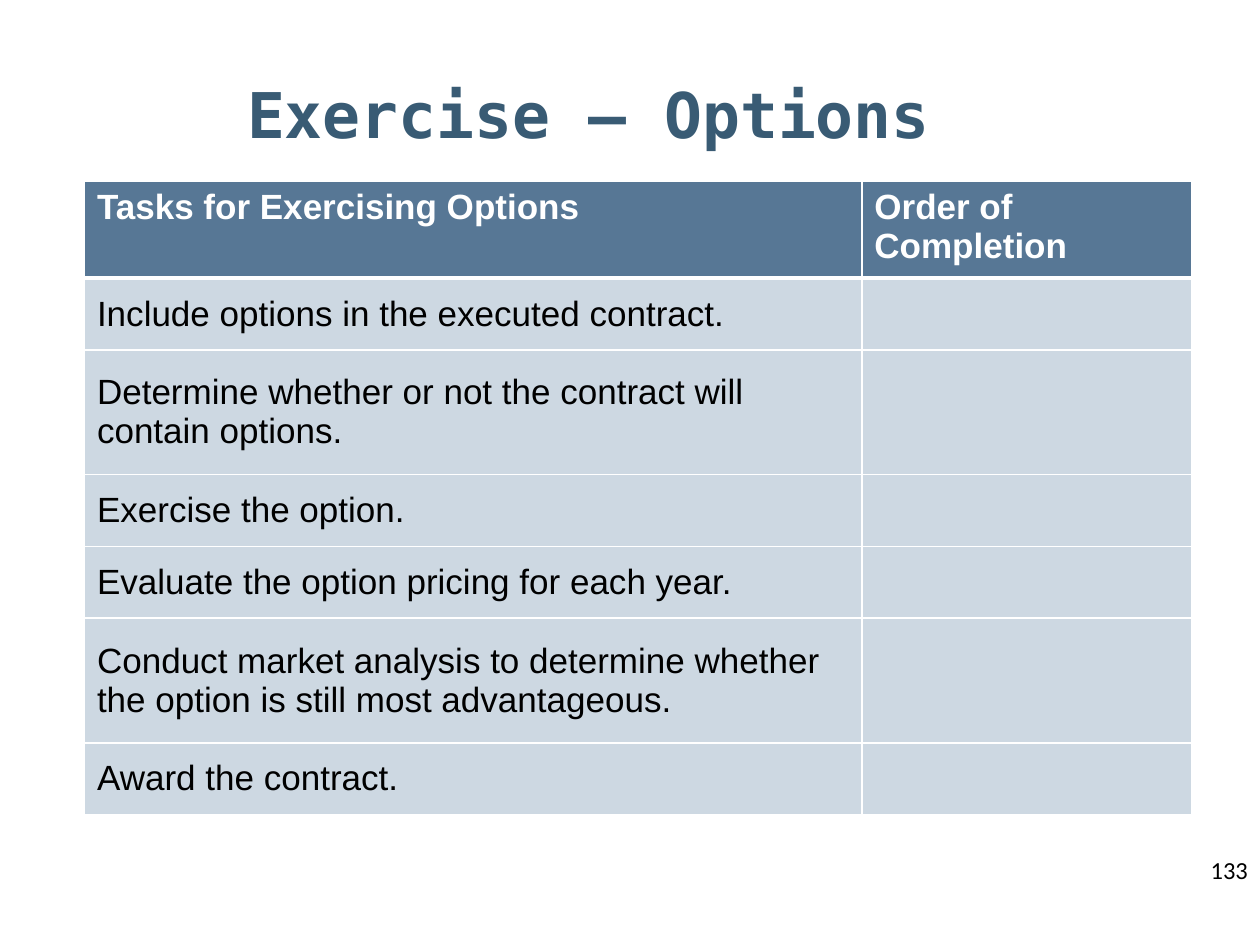
"""Build the options exercise slide with its task-ordering table."""
from dataclasses import dataclass

from lxml.etree import SubElement as Sub
from pptx import Presentation
from pptx.dml.color import RGBColor as RGB
from pptx.enum.text import MSO_ANCHOR as Anchor, PP_ALIGN as Align
from pptx.oxml.ns import qn
from pptx.util import Inches, Pt

WHITE, BLACK = "FFFFFF", "000000"


@dataclass
class Row:
    task: str
    order: str = ""
    height: float = 0.57
    fill: str = "CDD8E2"
    color: str = BLACK
    bold: bool = False
    anchor: Anchor = Anchor.MIDDLE
    top: float = 1
    bottom: float = 1


ROWS = [
    Row("Tasks for Exercising Options", "Order of Completion", fill="577795",
        color=WHITE, bold=True, anchor=Anchor.TOP, bottom=3),
    Row("Include options in the executed contract.", top=3),
    Row("Determine whether or not the contract will contain options.", height=0.99),
    Row("Exercise the option."),
    Row("Evaluate the option pricing for each year."),
    Row("Conduct market analysis to determine whether the option is still "
        "most advantageous.", height=0.99),
    Row("Award the contract."),
]
COLS = [6.17, 2.62]


def rgb(color: str) -> RGB:
    return RGB.from_string(color)


def style(p, color: str, **formats) -> None:
    for name, value in formats.items():
        setattr(p.font, name, value)
    p.font.color.rgb = rgb(color)


def place(sp, *box: float) -> None:
    for name, value in zip(("left", "top", "width", "height"), box):
        setattr(sp, name, Inches(value))


def add_borders(cell, row: Row) -> None:
    tc_pr = cell._tc.get_or_add_tcPr()
    widths = {"a:lnL": 1, "a:lnR": 1, "a:lnT": row.top, "a:lnB": row.bottom}
    for tag, width in widths.items():
        ln = Sub(tc_pr, qn(tag), w=str(Pt(width)))
        Sub(Sub(ln, qn("a:solidFill")), qn("a:srgbClr"), val=WHITE)


def fill_cell(cell, text: str, row: Row) -> None:
    add_borders(cell, row)
    cell.fill.solid()
    cell.fill.fore_color.rgb = rgb(row.fill)
    cell.vertical_anchor = row.anchor
    cell.text = text
    style(cell.text_frame.paragraphs[0], row.color,
          name="Arial", size=Pt(20), bold=row.bold)


def add_tasks(s) -> None:
    box = [Inches(v) for v in (0.67, 1.44, sum(COLS), sum(r.height for r in ROWS))]
    table = s.shapes.add_table(len(ROWS), len(COLS), *box).table
    table.horz_banding = False
    for col, width in zip(table.columns, COLS):
        col.width = Inches(width)
    for i, row in enumerate(ROWS):
        table.rows[i].height = Inches(row.height)
        for j, text in enumerate((row.task, row.order)):
            fill_cell(table.cell(i, j), text, row)


def add_title(s, text: str) -> None:
    sp = s.shapes.title
    place(sp, 0.67, 0.46, 8, 0.88)
    tf = sp.text_frame
    tf.text, tf.vertical_anchor = text, Anchor.MIDDLE
    p = tf.paragraphs[0]
    p.alignment = Align.CENTER
    style(p, "395B74", name="DejaVu Sans Mono", size=Pt(36), bold=True)


def add_number(s, text: str) -> None:
    sp = s.shapes.add_textbox(0, 0, 0, 0)
    place(sp, 9.51, 6.74, 0.58, 0.77)
    tf = sp.text_frame
    tf.text, tf.word_wrap = text, True
    style(tf.paragraphs[0], BLACK, name="Calibri", size=Pt(14))


def main() -> None:
    prs = Presentation()
    prs.slide_width, prs.slide_height = Inches(10), Inches(7.5)
    s = prs.slides.add_slide(prs.slide_layouts[5])
    add_number(s, "133")
    add_tasks(s)
    add_title(s, "Exercise – Options")
    prs.save("out.pptx")


if __name__ == "__main__":
    main()
